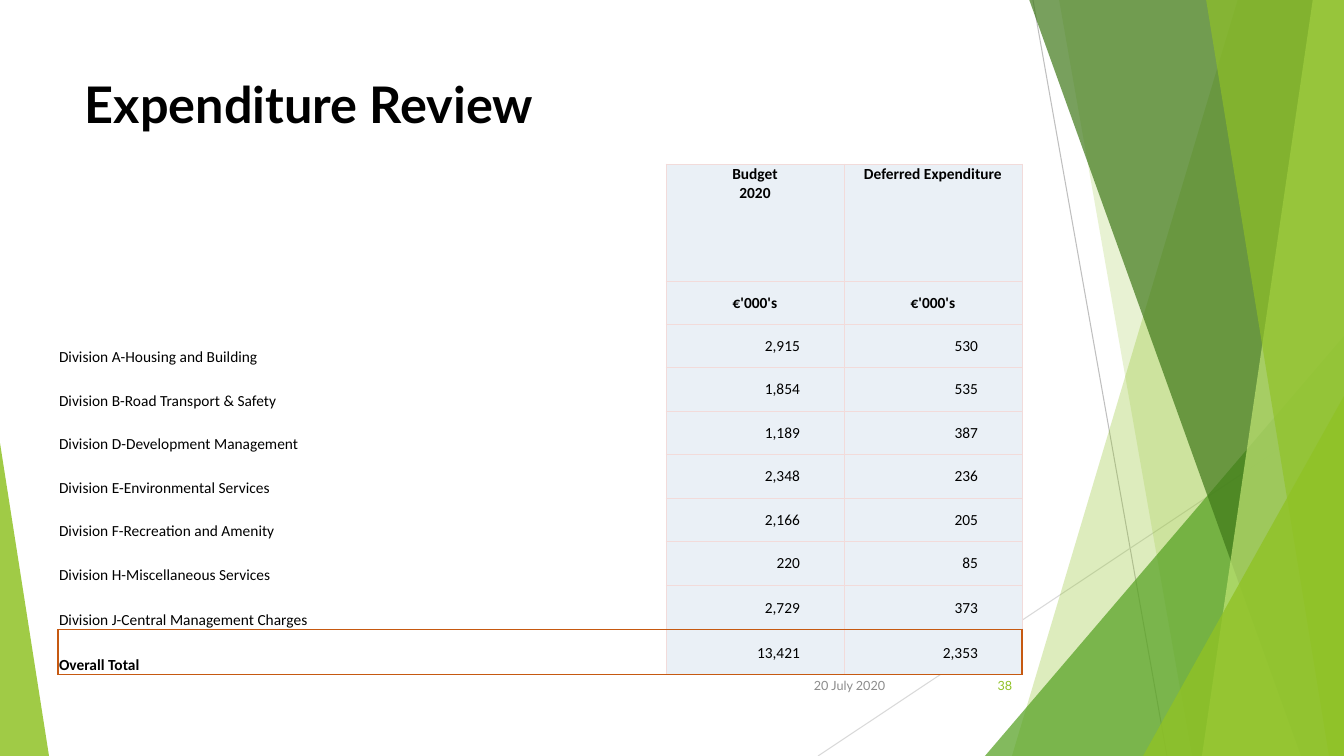
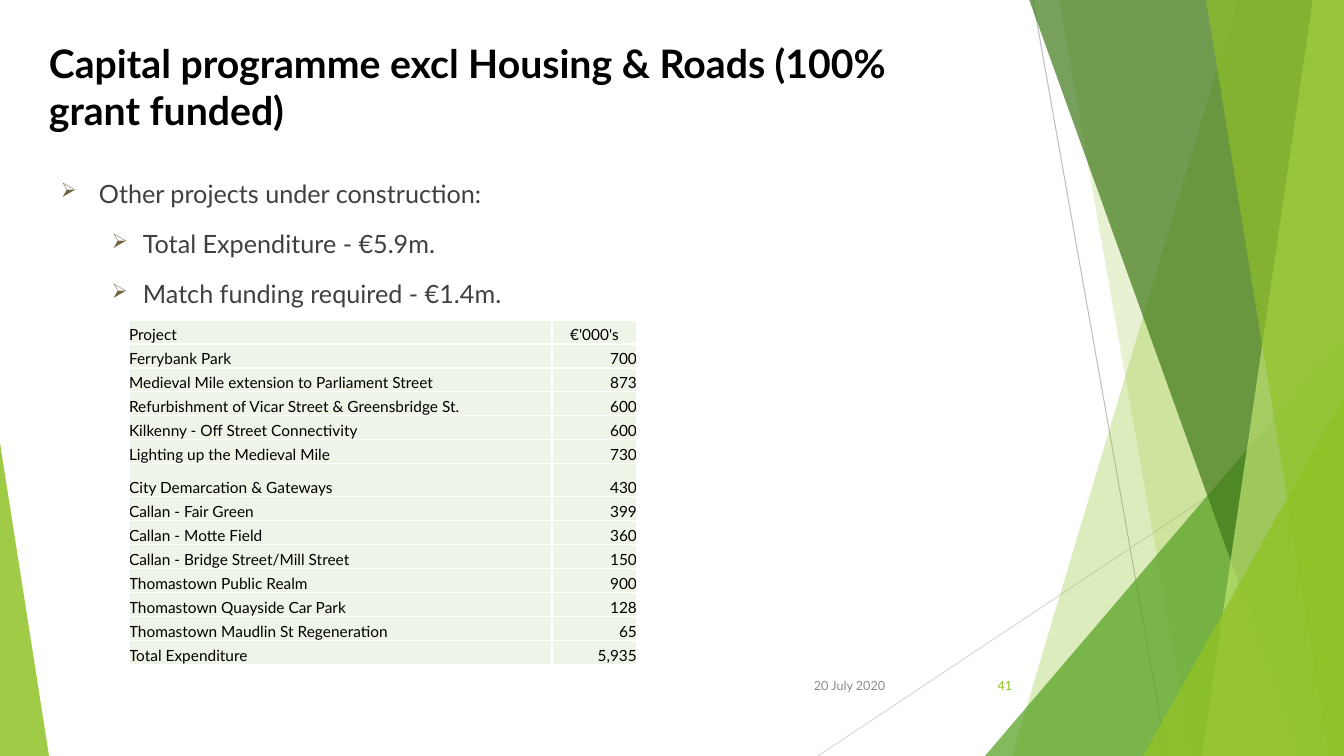
import pptx
import pptx.util
import pptx.dml.color
import pptx.enum.shapes
import pptx.enum.text
import pptx.oxml.ns
import lxml.etree

SCALE = 914400 / 100.8
WIDE, HIGH = 1344, 756
BLACK, LIME, LEAF, ORANGE, PINK = "000000", "90C226", "54A021", "C65911", "F2DBDA"
ALIGN = pptx.enum.text.PP_ALIGN
ANCHOR = pptx.enum.text.MSO_ANCHOR

LINES = [("BFBFBF", 1033, 0, 1167, 756), ("D9D9D9", 1344, 406, 818, 756)]
BANDS = [
    ("slant", LIME, 30, (1238, 1012)),
    ("slant", LIME, 20, (1059, 1192)),
    ("wedge", LEAF, 72, (985, 336, 359, 420, 1)),
    ("slant", "3F7819", 70, (1029, 1301)),
    ("slant", "C0E474", 70, (1313, 1202)),
    ("slant", LIME, 65, (1206, 1329)),
    ("wedge", LIME, 80, (1143, 396, 201, 360, 1)),
    ("wedge", LIME, 85, (0, 443, 49, 313, 0)),
]
DATE = "20 July 2020"

BUDGET = [
    ("", "Budget\n2020", "Deferred Expenditure"),
    ("", "€'000's", "€'000's"),
    ("Division A-Housing and Building", "2,915", "530"),
    ("Division B-Road Transport & Safety", "1,854", "535"),
    ("Division D-Development Management", "1,189", "387"),
    ("Division E-Environmental Services", "2,348", "236"),
    ("Division F-Recreation and Amenity", "2,166", "205"),
    ("Division H-Miscellaneous Services", "220", "85"),
    ("Division J-Central Management Charges", "2,729", "373"),
    ("Overall Total", "13,421", "2,353"),
]
WORKS = [
    ("Project", "€'000's"),
    ("Ferrybank Park", "700"),
    ("Medieval Mile extension to Parliament Street", "873"),
    ("Refurbishment of Vicar Street & Greensbridge St.", "600"),
    ("Kilkenny - Off Street Connectivity", "600"),
    ("Lighting up the Medieval Mile", "730"),
    ("City Demarcation & Gateways", "430"),
    ("Callan - Fair Green", "399"),
    ("Callan - Motte Field", "360"),
    ("Callan - Bridge Street/Mill Street", "150"),
    ("Thomastown Public Realm", "900"),
    ("Thomastown Quayside Car Park", "128"),
    ("Thomastown Maudlin St Regeneration", "65"),
    ("Total Expenditure", "5,935"),
]
POINTS = [
    (0, "Other projects under construction:"),
    (1, "Total Expenditure - €5.9m."),
    (1, "Match funding required - €1.4m."),
]
INDENTS = [(38, -38), (82, -31)]


def px(n):
    return pptx.util.Emu(round(n * SCALE))


def tint(code):
    return pptx.dml.color.RGBColor.from_string(code)


def node(parent, tag, **attrs):
    return lxml.etree.SubElement(parent, pptx.oxml.ns.qn("a:" + tag), attrs)


def put(thing, **values):
    for name, value in values.items():
        setattr(thing, name, value)


def style(para, size, color, face="Lato", bold=False, **values):
    put(para, **values)
    put(para.font, size=pptx.util.Pt(size), name=face, bold=bold)
    para.font.color.rgb = tint(color)


def box(slide, area, anchor=ANCHOR.TOP):
    frame = slide.shapes.add_textbox(*map(px, area)).text_frame
    put(frame, word_wrap=True, vertical_anchor=anchor)
    return frame


def write(slide, text, area, size, color, anchor=ANCHOR.TOP, **values):
    para = box(slide, area, anchor).paragraphs[0]
    para.text = text
    style(para, size, color, **values)


def slant(slide, top, foot):
    build = slide.shapes.build_freeform(top, -1, scale=SCALE)
    build.add_line_segments([(WIDE, -1), (WIDE, HIGH), (foot, HIGH)], close=True)
    return build.convert_to_shape()


def wedge(slide, left, top, width, height, peak):
    kind = pptx.enum.shapes.MSO_SHAPE.ISOSCELES_TRIANGLE
    shape = slide.shapes.add_shape(kind, *map(px, (left, top, width, height)))
    shape.adjustments[0] = peak
    return shape


def start(deck, title, area, size, number):
    slide = deck.slides.add_slide(deck.slide_layouts[6])
    for color, *ends in LINES:
        kind = pptx.enum.shapes.MSO_CONNECTOR.STRAIGHT
        line = slide.shapes.add_connector(kind, *map(px, ends))
        line.line.width = pptx.util.Pt(0.75)
        line.line.color.rgb = tint(color)
        node(line.element.spPr, "effectLst")
    draw = {"slant": slant, "wedge": wedge}
    for kind, color, alpha, form in BANDS:
        shape = draw[kind](slide, *form)
        shape.shadow.inherit = False
        shape.fill.solid()
        shape.fill.fore_color.rgb = tint(color)
        shape.line.fill.background()
        paint = shape.element.spPr.find(".//" + pptx.oxml.ns.qn("a:srgbClr"))
        node(paint, "alpha", val=str(alpha * 1000))
    write(slide, title, area, size, BLACK, bold=True)
    for text, left, width, color in [(DATE, 794, 101, "8C8C8C"), (number, 946, 76, LIME)]:
        write(slide, text, (left, 666, width, 40), 9, color,
              ANCHOR.MIDDLE, alignment=ALIGN.RIGHT)
    return slide


def grid(slide, data, left, top, cols, rows, look):
    area = map(px, (left, top, sum(cols), sum(rows)))
    table = slide.shapes.add_table(len(rows), len(cols), *area).table
    put(table, first_row=False, horz_banding=False)
    for col, width in zip(table.columns, cols):
        col.width = px(width)
    for row, height in zip(table.rows, rows):
        row.height = px(height)
    for r, line in enumerate(data):
        for c, text in enumerate(line):
            cell = table.cell(r, c)
            edges, fill, margins, anchor, font = look(r, c)
            sides = ("margin_left", "margin_top", "margin_right", "margin_bottom")
            put(cell, vertical_anchor=anchor, **dict(zip(sides, map(px, margins))))
            para = cell.text_frame.paragraphs[0]
            para.text = text
            style(para, 11, BLACK, **font)
            props = cell._tc.get_or_add_tcPr()
            for side in "LRTB":
                if side in edges:
                    color, weight = edges[side]
                    rule = node(props, "ln" + side, w=str(pptx.util.Pt(weight)))
                    node(node(rule, "solidFill"), "srgbClr", val=color)
            if fill:
                cell.fill.solid()
                cell.fill.fore_color.rgb = tint(fill)
            else:
                cell.fill.background()


def ledger(r, c):
    last = len(BUDGET) - 1
    edges = dict.fromkeys("LRTB" if c else "R", (PINK, 0.5))
    if r >= last - 1:
        edges["B"] = (ORANGE, 1)
    if r == last:
        edges["T"] = (ORANGE, 1)
        if c != 1:
            edges["R" if c else "L"] = (ORANGE, 1)
    head = r < 2
    side = ALIGN.LEFT if c == 0 else ALIGN.CENTER if head else ALIGN.RIGHT
    anchor = ANCHOR.BOTTOM if c == 0 else ANCHOR.MIDDLE if r else ANCHOR.TOP
    margins = (1, 1, 1 if head or c == 0 else 44, 0)
    font = dict(face="Calibri", bold=head or (r == last and c == 0), alignment=side)
    return edges, "EAF0F6" if c else None, margins, anchor, font


def listing(r, c):
    side = ALIGN.LEFT if c == 0 else ALIGN.RIGHT if r else ALIGN.CENTER
    edges = dict.fromkeys("LRTB", ("FFFFFF", 1))
    return edges, "EEF4E8", (0, 0, 0, 0), ANCHOR.BOTTOM, dict(alignment=side)


def bullets(slide, area):
    frame = box(slide, area)
    for i, (level, text) in enumerate(POINTS):
        para = frame.add_paragraph() if i else frame.paragraphs[0]
        para.text = text
        props = para._p.get_or_add_pPr()
        left, hang = INDENTS[level]
        props.set("marL", str(px(left)))
        props.set("indent", str(px(hang)))
        node(node(props, "buClr"), "srgbClr", val="6D6540")
        node(props, "buSzPct", val="80000")
        node(props, "buChar", char="➢")
        style(para, 18, "404040", level=level, line_spacing=1.2,
              space_before=pptx.util.Pt(10 if i else 0))


def main():
    deck = pptx.Presentation()
    put(deck, slide_width=px(WIDE), slide_height=px(HIGH))
    slide = start(deck, "Expenditure Review", (75, 68, 948, 145), 36, "38")
    grid(slide, BUDGET, 58, 164, [608, 178, 178],
         [117, 43, 43, 44, 43, 44, 43, 44, 45, 45], ledger)
    slide = start(deck, "Capital programme excl Housing & Roads (100% grant funded)",
                  (39, 34, 907, 121), 28, "41")
    bullets(slide, (51, 167, 907, 499))
    grid(slide, WORKS, 129, 320, [423, 85], [24] * 6 + [33] + [24] * 7, listing)
    deck.save("out.pptx")


if __name__ == "__main__":
    main()
